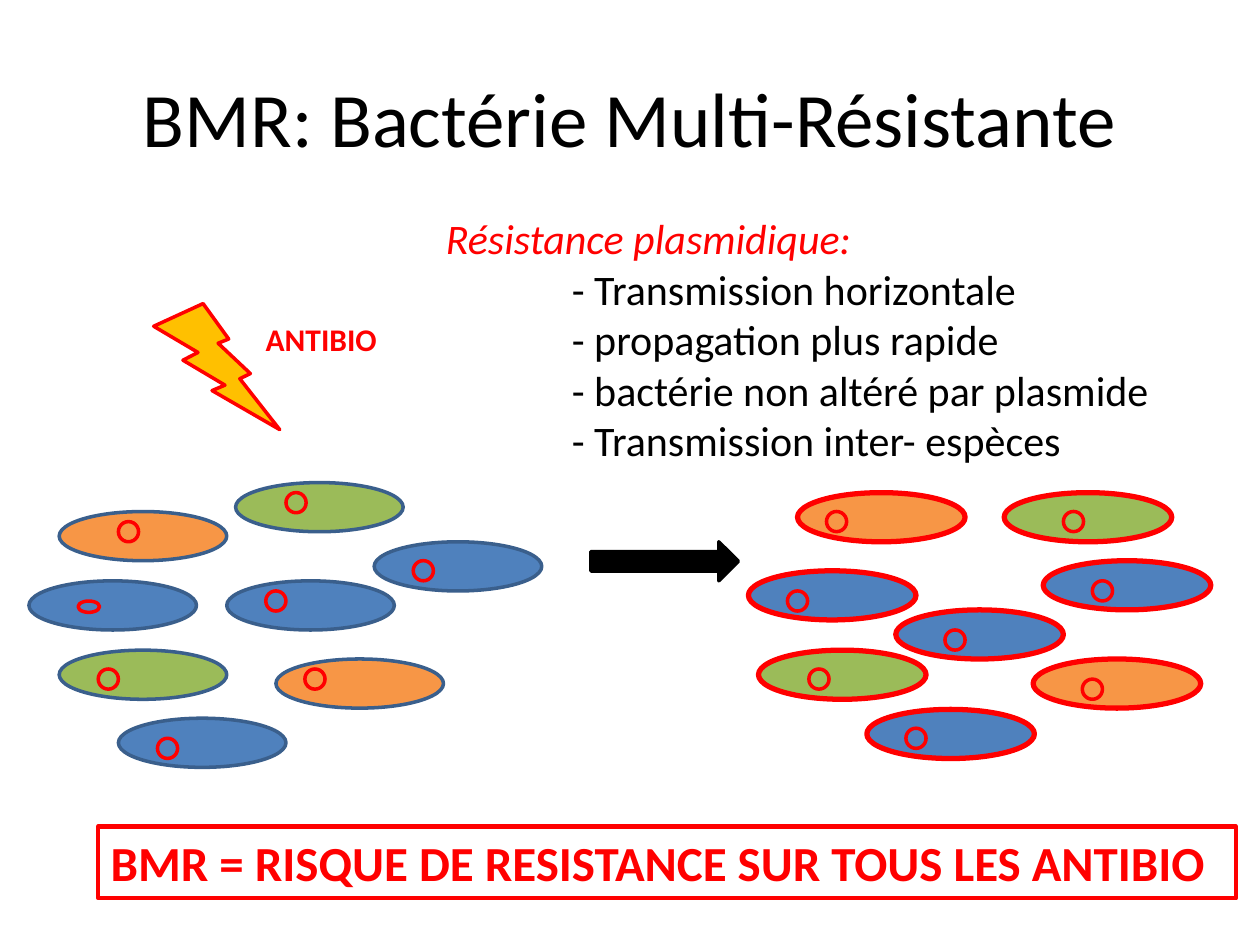
import pptx
import pptx.util
import pptx.dml.color
import pptx.enum.shapes
import pptx.enum.text
import pptx.oxml.ns
import lxml.etree

Inches = pptx.util.Inches
RGBColor = pptx.dml.color.RGBColor
SHAPE = pptx.enum.shapes.MSO_SHAPE

RED = RGBColor(0xFF, 0x00, 0x00)
BLACK = RGBColor(0x00, 0x00, 0x00)
BLUE = RGBColor(0x4F, 0x81, 0xBD)
GREEN = RGBColor(0x9B, 0xBB, 0x59)
ORANGE = RGBColor(0xF7, 0x96, 0x46)
NAVY = RGBColor(0x3A, 0x5F, 0x8C)
AMBER = RGBColor(0xFF, 0xC0, 0x00)

BACTERIUM = (1.33, 0.39)
PLASMID = (0.16, 0.16)
FLAT_PLASMID = (0.17, 0.09)

SENSITIVE = [
    (0.47, 4.06, ORANGE, 0.94, 4.14, PLASMID),
    (0.23, 4.61, BLUE, 0.62, 4.77, FLAT_PLASMID),
    (0.47, 5.16, GREEN, 0.78, 5.31, PLASMID),
    (1.8, 4.61, BLUE, 2.11, 4.69, PLASMID),
    (2.19, 5.23, ORANGE, 2.42, 5.31, PLASMID),
    (2.97, 4.3, BLUE, 3.28, 4.45, PLASMID),
    (1.87, 3.83, GREEN, 2.27, 3.91, PLASMID),
    (0.94, 5.7, BLUE, 1.25, 5.86, PLASMID),
]
RESISTANT = [
    (5.94, 4.53, BLUE, 6.25, 4.69, PLASMID),
    (6.33, 3.91, ORANGE, 6.56, 4.06, PLASMID),
    (8.28, 4.45, BLUE, 8.67, 4.61, PLASMID),
    (7.97, 3.91, GREEN, 8.44, 4.06, PLASMID),
    (6.02, 5.16, GREEN, 6.42, 5.31, PLASMID),
    (6.88, 5.63, BLUE, 7.19, 5.78, PLASMID),
    (7.11, 4.84, BLUE, 7.5, 5, PLASMID),
    (8.2, 5.23, ORANGE, 8.59, 5.39, PLASMID),
]
PROPERTIES = [
    "Transmission horizontale",
    "propagation plus rapide",
    "bactérie non altéré par plasmide",
    "Transmission inter- espèces",
]


def write(p, text, size=24, color=BLACK, bold=False, italic=False, font="Calibri", tab=None):
    if tab:
        qn = pptx.oxml.ns.qn
        stops = lxml.etree.SubElement(p._p.get_or_add_pPr(), qn("a:tabLst"))
        lxml.etree.SubElement(stops, qn("a:tab"), pos=str(Inches(tab)), algn="l")
    r = p.add_run()
    r.text = text
    r.font.name = font
    r.font.size = pptx.util.Pt(size)
    r.font.color.rgb = color
    r.font.bold = bold
    r.font.italic = italic


class Builder:
    def __init__(self, s, line_width=2):
        self.s = s
        self.line_width = line_width

    def title(self, text, x, y, w, h):
        sp = self.s.shapes.title
        sp.left, sp.top, sp.width, sp.height = map(Inches, (x, y, w, h))
        tf = sp.text_frame
        tf.vertical_anchor = pptx.enum.text.MSO_ANCHOR.MIDDLE
        p = tf.paragraphs[0]
        p.alignment = pptx.enum.text.PP_ALIGN.CENTER
        write(p, text, size=44)

    def shape(self, kind, x, y, w, h, fill=None, line=RED, width=None):
        sp = self.s.shapes.add_shape(kind, *map(Inches, (x, y, w, h)))
        sp.shadow.inherit = False
        if fill is None:
            sp.fill.background()
        else:
            sp.fill.solid()
            sp.fill.fore_color.rgb = fill
        sp.line.color.rgb = line
        sp.line.width = pptx.util.Pt(width or self.line_width)
        return sp

    def colony(self, bacteria, line, width):
        for x, y, fill, px, py, plasmid in bacteria:
            self.shape(SHAPE.OVAL, x, y, *BACTERIUM, fill, line, width)
            self.shape(SHAPE.OVAL, px, py, *plasmid)

    def text(self, x, y, w, h, *lines):
        sp = self.s.shapes.add_textbox(*map(Inches, (x, y, w, h)))
        tf = sp.text_frame
        tf.word_wrap = False
        for i, (text, style) in enumerate(lines):
            p = tf.add_paragraph() if i else tf.paragraphs[0]
            write(p, text, **style)
        return sp


def main():
    prs = pptx.Presentation()
    prs.slide_width, prs.slide_height = Inches(10), Inches(7.5)
    b = Builder(prs.slides.add_slide(prs.slide_layouts[5]))

    b.title("BMR: Bactérie Multi-Résistante", 0.5, 0.3, 9, 1.25)
    b.text(3.44, 1.64, 5.85, 2.12,
           ("Résistance plasmidique:", dict(color=RED, italic=True)),
           *((f"\t- {item}", dict(tab=1)) for item in PROPERTIES))

    b.shape(SHAPE.LIGHTNING_BOLT, 1.22, 2.41, 1, 1, AMBER)
    b.text(2.01, 2.49, 1.09, 0.4, ("ANTIBIO", dict(size=18, color=RED, bold=True)))

    b.colony(SENSITIVE, NAVY, 2)
    b.shape(SHAPE.RIGHT_ARROW, 4.69, 4.3, 1.17, 0.31, BLACK, BLACK)
    b.colony(RESISTANT, RED, 3)

    sp = b.text(0.78, 6.56, 9.03, 0.57,
                ("BMR = RISQUE DE RESISTANCE SUR TOUS LES ANTIBIO",
                 dict(size=28, color=RED, bold=True)))
    sp.line.color.rgb = RED
    sp.line.width = pptx.util.Pt(2.5)

    prs.save("out.pptx")


if __name__ == "__main__":
    main()
